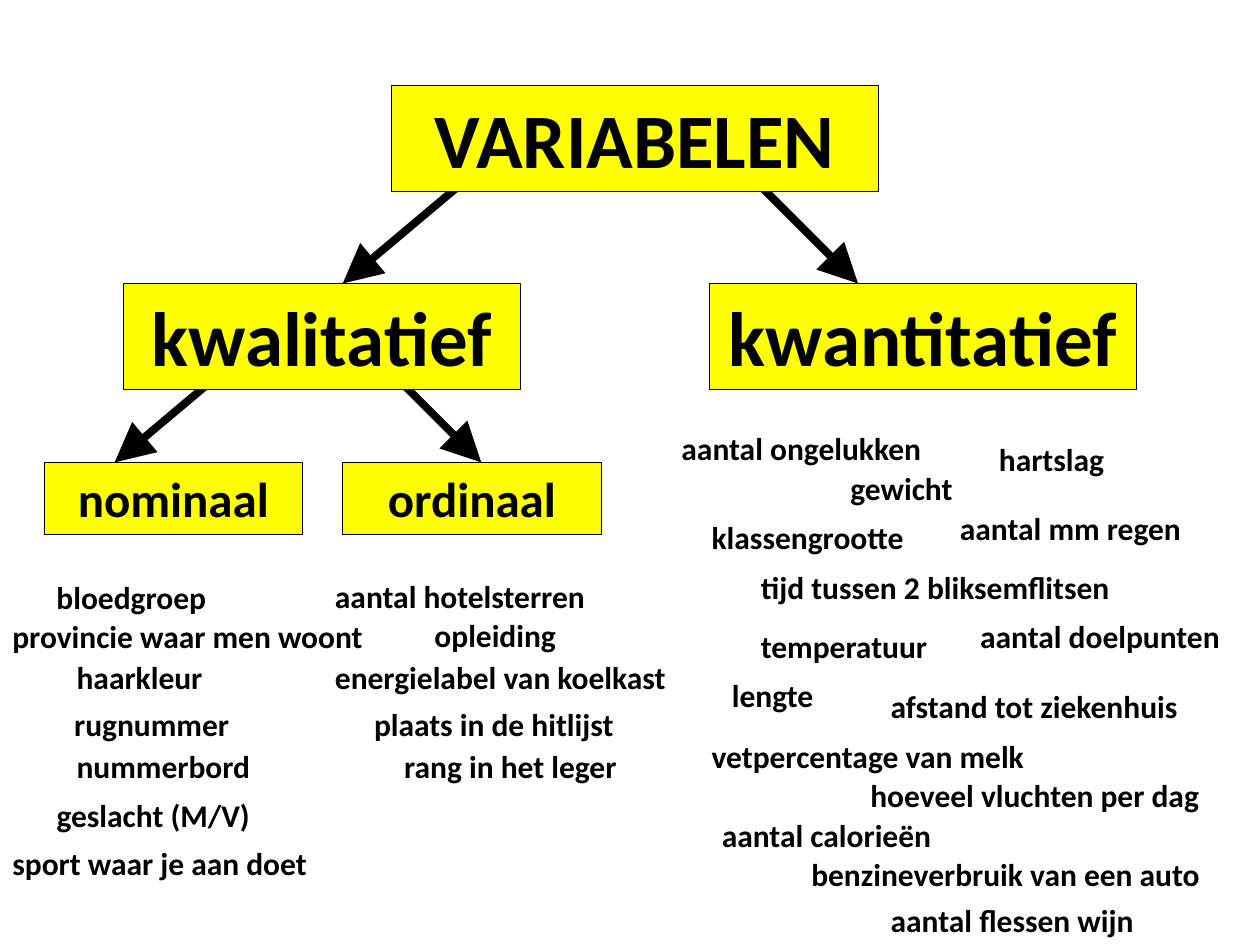
from lxml import etree
from pptx import Presentation
from pptx.dml.color import RGBColor
from pptx.enum import shapes, text
from pptx.oxml.ns import qn
from pptx.util import Inches, Pt

COLORS = {"ink": "000000", "box": "FFFF00"}
FONT = "Calibri"
EXAMPLE_SIZE, EXAMPLE_HEIGHT = 18, 0.4

# Examples per type of variable: text, left, top, width
EXAMPLES = {
    "nominaal": [
        ("bloedgroep", 0.35, 4.54, 1.4),
        ("provincie waar men woont", 0, 4.85, 3),
        ("haarkleur", 0.51, 5.17, 1.21),
        ("rugnummer", 0.49, 5.55, 1.44),
        ("nummerbord", 0.51, 5.88, 1.59),
        ("geslacht (M/V)", 0.35, 6.27, 1.75),
        ("sport waar je aan doet", 0, 6.65, 2.56),
    ],
    "ordinaal": [
        ("aantal hotelsterren", 2.56, 4.53, 2.62),
        ("opleiding", 3.35, 4.84, 1.17),
        ("energielabel van koelkast", 2.56, 5.17, 2.85),
        ("plaats in de hitlijst", 2.87, 5.55, 2.41),
        ("rang in het leger", 3.11, 5.88, 1.9),
    ],
    "kwantitatief": [
        ("aantal ongelukken", 5.31, 3.36, 2.12),
        ("hartslag", 7.83, 3.44, 1.04),
        ("gewicht", 6.65, 3.67, 1.02),
        ("aantal mm regen", 7.52, 3.99, 1.97),
        ("klassengrootte", 5.55, 4.06, 1.74),
        ("tijd tussen 2 bliksemflitsen", 5.94, 4.46, 2.99),
        ("aantal doelpunten", 7.68, 4.85, 2.12),
        ("temperatuur", 5.94, 4.93, 1.53),
        ("lengte", 5.71, 5.32, 0.85),
        ("afstand tot ziekenhuis", 6.97, 5.4, 2.5),
        ("vetpercentage van melk", 5.55, 5.8, 2.7),
        ("hoeveel vluchten per dag", 6.81, 6.11, 2.83),
        ("aantal calorieën", 5.63, 6.43, 1.88),
        ("benzineverbruik van een auto", 6.34, 6.74, 3.38),
        ("aantal flessen wijn", 6.97, 7.1, 2.15),
    ],
}

# Tree levels: top, height, text size, boxes (text, left, width)
LEVELS = [
    (0.68, 0.84, 44, [("VARIABELEN", 3.11, 3.86)]),
    (2.25, 0.84, 44, [("kwalitatief", 0.98, 3.15), ("kwantitatief", 5.63, 3.39)]),
    (3.67, 0.57, 28, [("nominaal", 0.35, 2.05), ("ordinaal", 2.72, 2.05)]),
]

# Arrows into each level below the first: start x, end x
ARROWS = [
    [(3.66, 2.72), (6.02, 6.81)],
    [(1.85, 0.91), (3.03, 3.82)],
]
ARROW_DROP = 0.79  # the upper end starts behind the parent box


def color(name):
    return RGBColor.from_string(COLORS[name])


def write(box, words, size, align, wrap):
    frame = box.text_frame
    frame.word_wrap = wrap
    frame.auto_size = text.MSO_AUTO_SIZE.SHAPE_TO_FIT_TEXT
    frame.vertical_anchor = text.MSO_ANCHOR.TOP
    para = frame.paragraphs[0]
    para.alignment = align
    span = para.add_run()
    span.text = words
    span.font.name = FONT
    span.font.size = Pt(size)
    span.font.bold = True
    span.font.color.rgb = color("ink")


def add_example(page, words, left, top, width):
    box = page.shapes.add_textbox(
        Inches(left), Inches(top), Inches(width), Inches(EXAMPLE_HEIGHT))
    write(box, words, EXAMPLE_SIZE, text.PP_ALIGN.LEFT, False)


def add_arrow(page, start_x, end_x, end_y):
    arrow = page.shapes.add_connector(
        shapes.MSO_CONNECTOR.STRAIGHT,
        Inches(start_x), Inches(end_y - ARROW_DROP), Inches(end_x), Inches(end_y))
    arrow.line.width = Pt(4.5)
    arrow.line.color.rgb = color("ink")
    properties = arrow._element.spPr
    etree.SubElement(properties.find(qn("a:ln")), qn("a:tailEnd"),
                     type="triangle", w="lg", len="lg")
    etree.SubElement(properties, qn("a:effectLst"))


def add_tree_box(page, words, left, top, width, height, size):
    box = page.shapes.add_shape(
        shapes.MSO_SHAPE.RECTANGLE,
        Inches(left), Inches(top), Inches(width), Inches(height))
    box.shadow.inherit = False
    box.fill.solid()
    box.fill.fore_color.rgb = color("box")
    box.line.color.rgb = color("ink")
    box.line.width = Pt(0.5)
    write(box, words, size, text.PP_ALIGN.CENTER, True)


def main():
    deck = Presentation()
    deck.slide_width, deck.slide_height = Inches(10), Inches(7.5)
    page = deck.slides.add_slide(deck.slide_layouts[6])

    for examples in EXAMPLES.values():
        for example in examples:
            add_example(page, *example)

    # Arrows go first, so the boxes cover their upper ends
    for (top, *_), arrows in zip(LEVELS[1:], ARROWS):
        for start_x, end_x in arrows:
            add_arrow(page, start_x, end_x, top)
    for top, height, size, boxes in LEVELS:
        for words, left, width in boxes:
            add_tree_box(page, words, left, top, width, height, size)

    deck.save("out.pptx")


if __name__ == "__main__":
    main()
